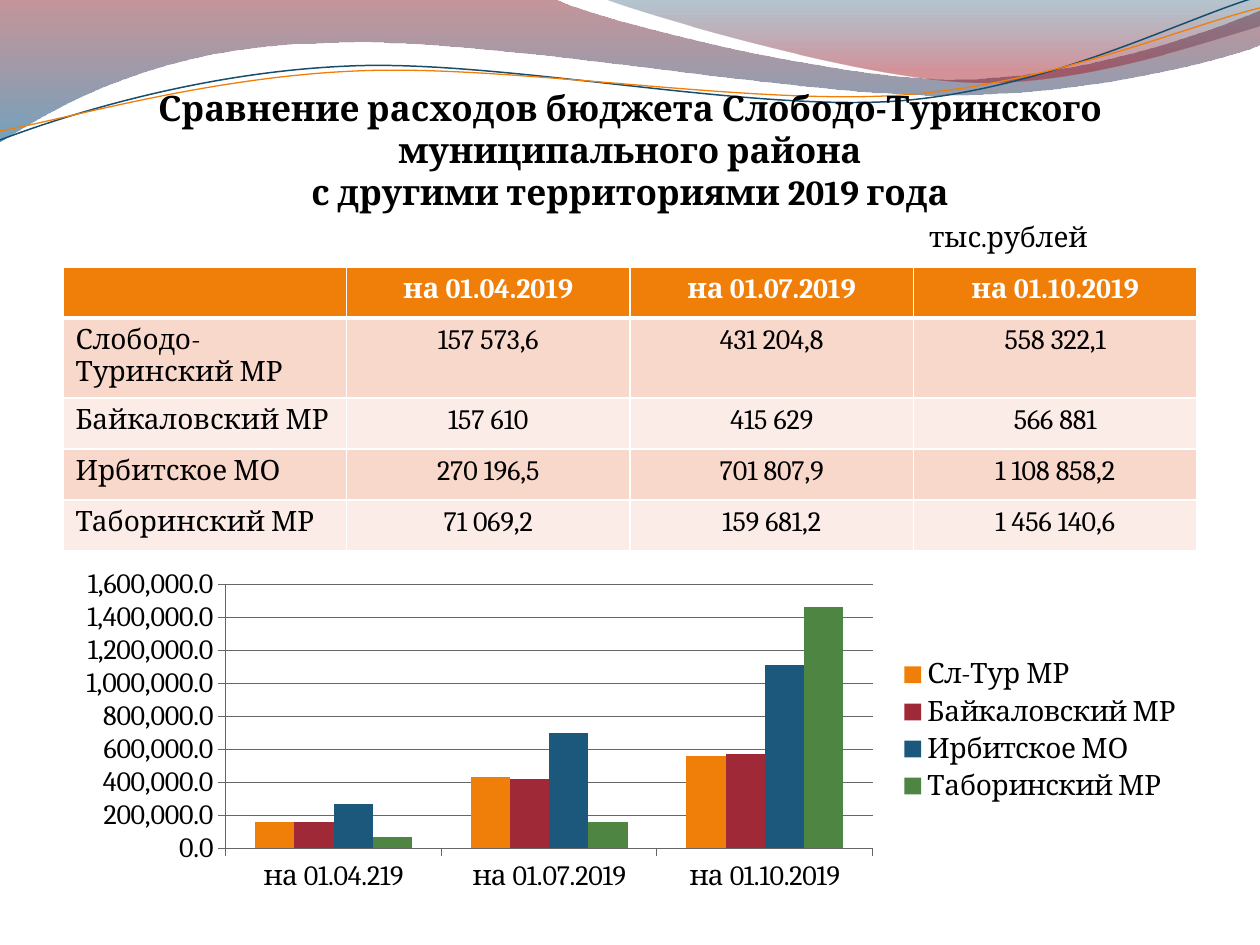
from lxml.etree import SubElement
from pptx import Presentation
from pptx.chart.data import CategoryChartData
from pptx.dml.color import RGBColor
from pptx.enum.chart import XL_CHART_TYPE, XL_LEGEND_POSITION, XL_TICK_MARK
from pptx.enum.text import MSO_ANCHOR, PP_ALIGN
from pptx.oxml.ns import qn
from pptx.util import Pt

PX = 914400 / 126
FONT = "Cambria"
INK = {
    "text": "000000", "white": "FFFFFF", "head": "F07F09",
    "odd": "F9D8CC", "even": "FCECE7", "grid": "666666",
    "wine": "7E1621", "sea": "005689", "navy": "094467",
    "red": "A10F1F", "blue": "184E6D",
    "bar1": "F07F09", "bar2": "9F2936", "bar3": "1B587C", "bar4": "4E8542",
}

TITLE = ("Сравнение расходов бюджета Слободо-Туринского муниципального района\n"
         "с другими территориями 2019 года")
UNIT = "тыс.рублей"
ROWS = [
    ("", "на 01.04.2019", "на 01.07.2019", "на 01.10.2019"),
    ("Слободо-Туринский МР", "157 573,6", "431 204,8", "558 322,1"),
    ("Байкаловский МР", "157 610", "415 629", "566 881"),
    ("Ирбитское МО", "270 196,5", "701 807,9", "1 108 858,2"),
    ("Таборинский МР", "71 069,2", "159 681,2", "1 456 140,6"),
]
HIGH = 51
DATES = ["на 01.04.219", "на 01.07.2019", "на 01.10.2019"]
BARS = [
    ("Сл-Тур МР", (160000, 430000, 560000), "bar1"),
    ("Байкаловский МР", (160000, 420000, 570000), "bar2"),
    ("Ирбитское МО", (270000, 700000, 1110000), "bar3"),
    ("Таборинский МР", (70000, 160000, 1460000), "bar4"),
]
WAVES = [
    ([(0, 0), (554, -1), (600, 21, 837, 79, 955, 79), (1075, 79, 1207, 33, 1260, 11),
      (1261, 45), (1238, 55, 1096, 96, 940, 95), (784, 95, 481, 35, 324, 43),
      (163, 45, 58, 105, -1, 142), (0, 0)],
     [("wine", 0, 45), ("sea", 1, 55)]),
    ([(604, -1), (641, 14, 859, 78, 969, 82), (1079, 87, 1211, 40, 1260, 26),
      (1260, 0), (604, -1)],
     [("navy", 0, 30), ("red", 0.8, 45)]),
]
LINES = [
    ([(0, 140), (60, 117, 199, 72, 349, 66), (498, 59, 747, 112, 898, 101),
      (1050, 89, 1182, 19, 1257, -3)], "blue", 0.85),
    ([(0, 131), (59, 121, 207, 77, 357, 71), (508, 64, 752, 106, 903, 95),
      (1053, 84, 1186, 26, 1260, 8)], "head", 0.75),
]


def px(*nums):
    return [round(n * PX) for n in nums]


def tint(name):
    return RGBColor.from_string(INK[name])


def put(para, text, size=16, color="text", bold=False, align=PP_ALIGN.CENTER):
    para.text = text
    para.alignment = align
    for run in para.runs:
        font = run.font
        font.name, font.size, font.bold = FONT, Pt(size), bold
        font.color.rgb = tint(color)
    SubElement(para._p, qn("a:endParaRPr"), sz=str(size * 100))


def draw(slide, steps, close):
    dots = [px(*step[i:i + 2]) for step in steps for i in range(0, len(step), 2)]
    pen = slide.shapes.build_freeform(*dots[0], scale=1.0)
    pen.add_line_segments(dots[1:], close=close)
    shape = pen.convert_to_shape()
    shape.shadow.inherit = False
    marks = iter(list(shape._element.spPr.iter(qn("a:lnTo"))))
    for step in steps[1:]:
        mark = next(marks)
        if len(step) == 6:
            curve = SubElement(mark.getparent(), qn("a:cubicBezTo"))
            mark.addprevious(curve)
            for line in (mark, next(marks), next(marks)):
                curve.append(line[0])
                line.getparent().remove(line)
    return shape


def add_waves(slide):
    for steps, stops in WAVES:
        shape = draw(slide, steps, True)
        shape.line.fill.background()
        shape.fill.gradient()
        shape.fill.gradient_angle = 270
        for stop, (name, spot, _) in zip(shape.fill.gradient_stops, stops):
            stop.color.rgb = tint(name)
            stop.position = spot
        marks = list(shape._element.spPr.iter(qn("a:srgbClr")))
        for mark, (_, _, alpha) in zip(marks, stops):
            SubElement(mark, qn("a:alpha"), val=str(alpha * 1000))
    for steps, name, width in LINES:
        shape = draw(slide, steps, False)
        shape.fill.background()
        shape.line.color.rgb = tint(name)
        shape.line.width = Pt(width)


def add_title(slide):
    frame = slide.shapes.add_textbox(*px(63, 95, 1134, 158)).text_frame
    frame.word_wrap = True
    frame.vertical_anchor = MSO_ANCHOR.BOTTOM
    frame.margin_left = frame.margin_right = frame.margin_bottom = 0
    put(frame.paragraphs[0], TITLE, size=20, bold=True)
    unit = frame.add_paragraph()
    put(unit, UNIT, align=PP_ALIGN.RIGHT)
    unit.space_before = Pt(4)
    unit._p.get_or_add_pPr().set("marR", str(px(109)[0]))


def edge(cell, row):
    props = cell._tc.get_or_add_tcPr()
    for side in "LRTB":
        thick = row == 0 and side == "B"
        line = SubElement(props, qn("a:ln" + side), w=str(Pt(3 if thick else 1)))
        SubElement(SubElement(line, qn("a:solidFill")), qn("a:srgbClr"), val=INK["white"])


def add_grid(slide):
    wide = len(ROWS[0])
    area = px(63, 267, 1134, HIGH * len(ROWS))
    table = slide.shapes.add_table(len(ROWS), wide, *area).table
    table.horz_banding = False
    for r, texts in enumerate(ROWS):
        for c, text in enumerate(texts):
            cell = table.cell(r, c)
            edge(cell, r)
            cell.fill.solid()
            cell.fill.fore_color.rgb = tint("head" if r == 0 else "odd" if r % 2 else "even")
            put(cell.text_frame.paragraphs[0], text, bold=r == 0,
                color="white" if r == 0 else "text",
                align=PP_ALIGN.LEFT if c == 0 else PP_ALIGN.CENTER)


def add_bars(slide):
    data = CategoryChartData(number_format="#,##0.0")
    data.categories = DATES
    for name, nums, _ in BARS:
        data.add_series(name, nums)
    chart = slide.shapes.add_chart(
        XL_CHART_TYPE.COLUMN_CLUSTERED, *px(64, 562, 1132, 337), data).chart
    chart.has_title = False
    chart.font.name, chart.font.size = FONT, Pt(16)
    chart.font.color.rgb = tint("text")
    chart.has_legend = True
    chart.legend.position = XL_LEGEND_POSITION.RIGHT
    chart.legend.include_in_layout = False
    plot = chart.plots[0]
    plot.gap_width, plot.overlap, plot.vary_by_categories = 150, 0, False
    for bar, (_, _, name) in zip(plot.series, BARS):
        bar.format.fill.solid()
        bar.format.fill.fore_color.rgb = tint(name)
    axis = chart.value_axis
    axis.minimum_scale, axis.maximum_scale, axis.major_unit = 0, 1600000, 200000
    axis.has_major_gridlines = True
    axis.tick_labels.number_format = "#,##0.0"
    axis.tick_labels.number_format_is_linked = False
    for part in (axis, chart.category_axis):
        part.major_tick_mark = XL_TICK_MARK.OUTSIDE
    for part in (axis, chart.category_axis, axis.major_gridlines):
        part.format.line.color.rgb = tint("grid")
        part.format.line.width = Pt(0.5)


def main():
    deck = Presentation()
    deck.slide_width, deck.slide_height = px(1260, 945)
    slide = deck.slides.add_slide(deck.slide_layouts[6])
    add_waves(slide)
    add_title(slide)
    add_grid(slide)
    add_bars(slide)
    deck.save("out.pptx")


if __name__ == "__main__":
    main()
